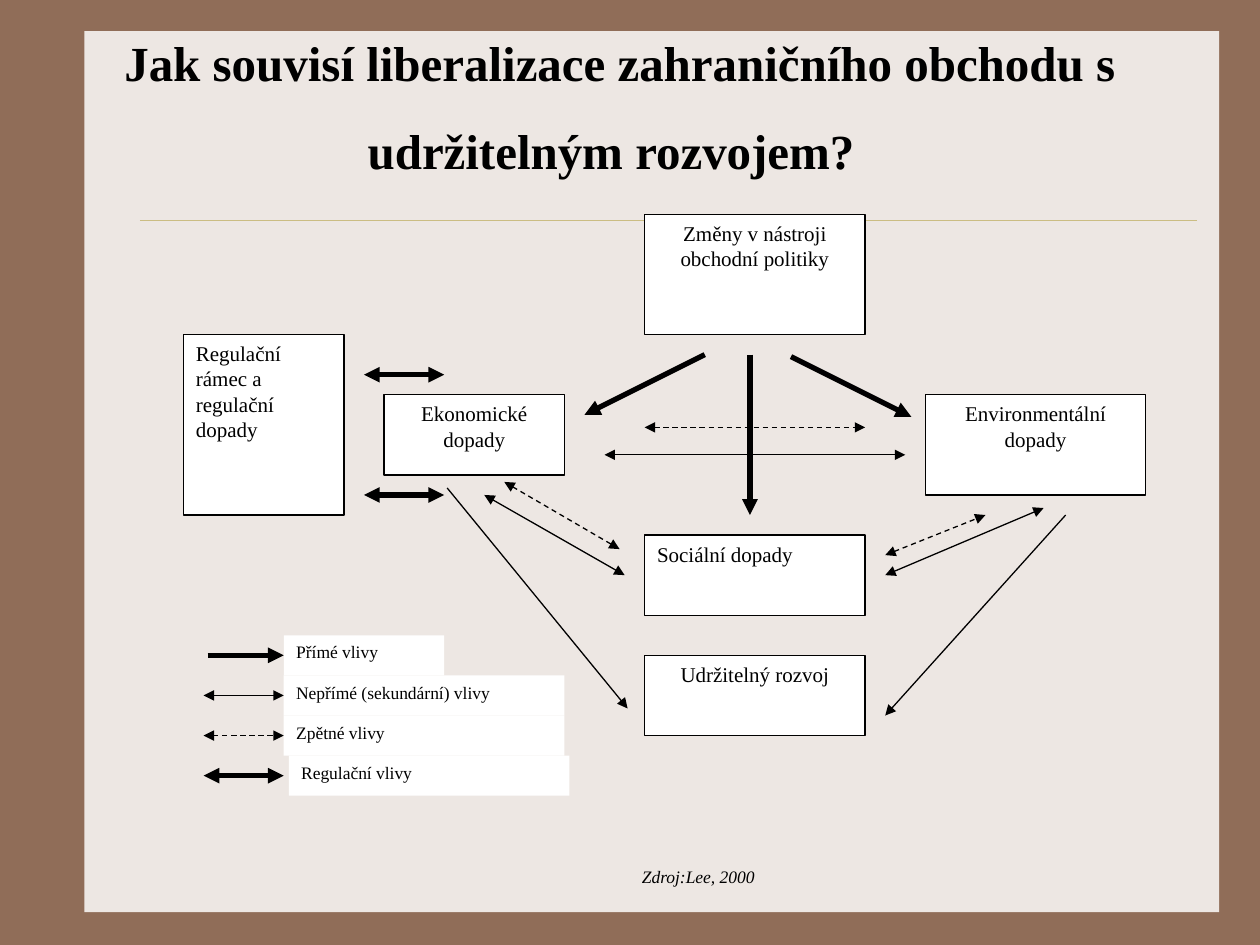
"""Build a slide on how trade liberalisation relates to sustainable development."""
from dataclasses import dataclass

from lxml import etree
from pptx import Presentation
from pptx import util as u
from pptx.dml.color import RGBColor
from pptx.enum import dml, shapes, text
from pptx.oxml.ns import qn


@dataclass(frozen=True)
class Theme:
    font: str = "Times New Roman"
    frame: RGBColor = RGBColor(0x90, 0x6D, 0x58)
    panel: RGBColor = RGBColor(0xED, 0xE7, 0xE3)
    rule: RGBColor = RGBColor(0xCB, 0xBD, 0x83)
    ink: RGBColor = RGBColor(0, 0, 0)
    paper: RGBColor = RGBColor(0xFF, 0xFF, 0xFF)
    title_size: u.Pt = u.Pt(28)
    gap_size: u.Pt = u.Pt(40)
    box_size: u.Pt = u.Pt(12)
    small_size: u.Pt = u.Pt(10)
    thin: u.Pt = u.Pt(0.75)
    thick: u.Pt = u.Pt(3)
    hairline: u.Pt = u.Pt(0.25)


theme = Theme()
LEFT, TOP = u.Cm(3.7), u.Cm(4.32)
STEP = u.Cm(19.4) / 48
CENTER, START = text.PP_ALIGN.CENTER, text.PP_ALIGN.LEFT

presentation = Presentation()
presentation.slide_width, presentation.slide_height = u.Cm(25.4), u.Cm(19.05)
slide = presentation.slides.add_slide(presentation.slide_layouts[6])
slide.background.fill.solid()
slide.background.fill.fore_color.rgb = theme.frame


def add_run(paragraph, words, size, bold=False, italic=False):
    run = paragraph.add_run()
    run.text = words
    run.font.name, run.font.size = theme.font, size
    run.font.bold, run.font.italic = bold, italic
    run.font.color.rgb = theme.ink


def add_line(start, end, color, width, dashed=False, ends=()):
    line = slide.shapes.add_connector(shapes.MSO_CONNECTOR.STRAIGHT, *start, *end)
    line.line.color.rgb = color
    line.line.width = width
    if dashed:
        line.line.dash_style = dml.MSO_LINE.DASH
    for end_name in ends:
        etree.SubElement(line.line._get_or_add_ln(), qn(f"a:{end_name}"), type="triangle")
    etree.SubElement(line._element.spPr, qn("a:effectLst"))


panel = slide.shapes.add_shape(
    shapes.MSO_SHAPE.RECTANGLE, u.Cm(1.7), u.Cm(0.63), u.Cm(22.88), u.Cm(17.76))
panel.shadow.inherit = False
panel.fill.solid()
panel.fill.fore_color.rgb = theme.panel
panel.line.fill.background()
add_line((u.Cm(2.82), u.Cm(4.44)), (u.Cm(24.13), u.Cm(4.44)), theme.rule, theme.hairline)

title = slide.shapes.add_textbox(u.Cm(1.7), u.Cm(0.53), u.Cm(21.59), u.Cm(3.18))
title.text_frame.word_wrap = True
title.text_frame.vertical_anchor = text.MSO_ANCHOR.MIDDLE
paragraph = title.text_frame.paragraphs[0]
paragraph.alignment = CENTER
paragraph.line_spacing = 1.1
add_run(paragraph, "Jak souvisí liberalizace zahraničního obchodu s udržitelným rozvojem?",
        theme.title_size, bold=True)
add_run(paragraph, " ", theme.gap_size, bold=True)

boxes = [
    ("Regulační rámec a regulační dopady", 0, 6, 8, 9, START, True),
    ("Ekonomické dopady", 10, 9, 9, 4, CENTER, True),
    ("Změny v nástroji obchodní politiky", 23, 0, 11, 6, CENTER, True),
    ("Environmentální dopady", 37, 9, 11, 5, CENTER, True),
    ("Sociální dopady", 23, 16, 11, 4, START, True),
    ("Udržitelný rozvoj", 23, 22, 11, 4, CENTER, True),
    ("Přímé vlivy", 5, 21, 8, 2, START, False),
    ("Nepřímé (sekundární) vlivy", 5, 23, 14, 2, START, False),
    ("Zpětné vlivy", 5, 25, 14, 2, START, False),
    ("Regulační vlivy", 5.25, 27, 14, 2, START, False),
]
for words, column, row, columns, rows, alignment, outlined in boxes:
    box = slide.shapes.add_shape(
        shapes.MSO_SHAPE.RECTANGLE, int(LEFT + column * STEP), int(TOP + row * STEP),
        int(columns * STEP), int(rows * STEP))
    box.shadow.inherit = False
    box.fill.solid()
    box.fill.fore_color.rgb = theme.paper
    if outlined:
        box.line.color.rgb = theme.ink
        box.line.width = theme.thin
    else:
        box.line.fill.background()
    box.text_frame.word_wrap = True
    box.text_frame.vertical_anchor = text.MSO_ANCHOR.TOP
    paragraph = box.text_frame.paragraphs[0]
    paragraph.alignment = alignment
    add_run(paragraph, words, theme.box_size if outlined else theme.small_size)

ONE_WAY, BOTH_WAYS = ("tailEnd",), ("headEnd", "tailEnd")
arrow_groups = [
    (theme.thick, False, ONE_WAY, [
        (28.25, 7, 28.25, 15), (26, 7, 20, 10), (30.3, 7.1, 36.3, 10.1), (1.2, 22, 5, 22)]),
    (theme.thin, False, BOTH_WAYS, [
        (21, 12, 36, 12), (15, 14, 22, 18), (35, 18, 42.9, 14.65), (1, 24, 5, 24)]),
    (theme.thin, False, ONE_WAY, [(13.15, 13.65, 22.15, 24.65), (44, 15, 35, 25)]),
    (theme.thin, True, BOTH_WAYS, [
        (23, 10.63, 34, 10.63), (16, 13.35, 21.75, 16.7), (35, 17, 40, 15), (1, 26, 5, 26)]),
    (theme.thick, False, BOTH_WAYS, [(9, 8, 13, 8), (9, 14, 13, 14), (1, 28, 5, 28)]),
]
for width, dashed, ends, arrows in arrow_groups:
    for x1, y1, x2, y2 in arrows:
        add_line((int(LEFT + x1 * STEP), int(TOP + y1 * STEP)),
                 (int(LEFT + x2 * STEP), int(TOP + y2 * STEP)),
                 theme.ink, width, dashed, ends)

source = slide.shapes.add_textbox(u.Cm(11.71), u.Cm(17.32), u.Cm(3.76), u.Cm(0.69))
source.text_frame.word_wrap = False
source.text_frame.auto_size = text.MSO_AUTO_SIZE.SHAPE_TO_FIT_TEXT
source.text_frame.vertical_anchor = text.MSO_ANCHOR.MIDDLE
paragraph = source.text_frame.paragraphs[0]
paragraph.alignment = CENTER
paragraph._p.get_or_add_pPr().set("indent", str(u.Cm(0.97)))
add_run(paragraph, "Zdroj:Lee, 2000", theme.small_size, italic=True)

presentation.save("out.pptx")
